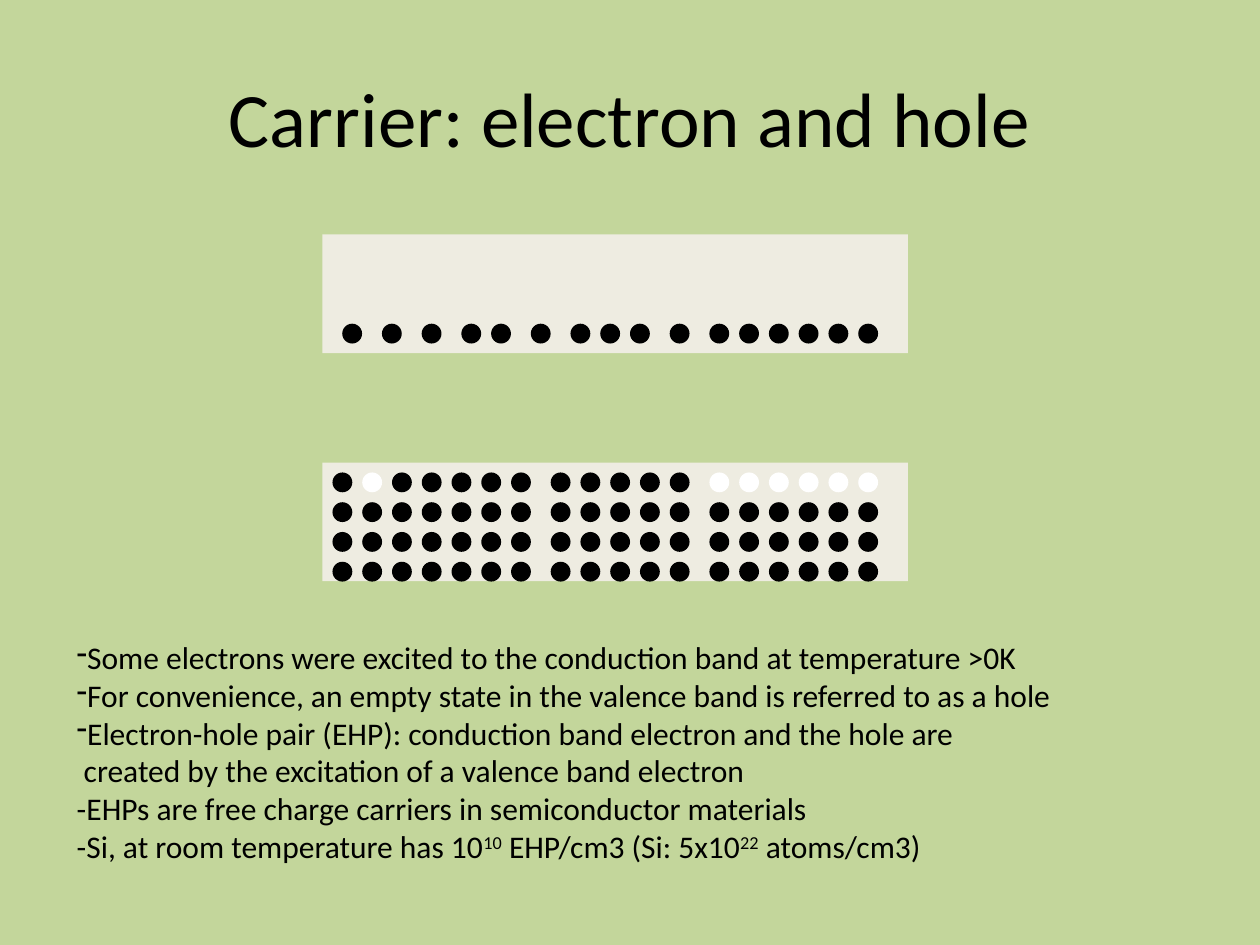
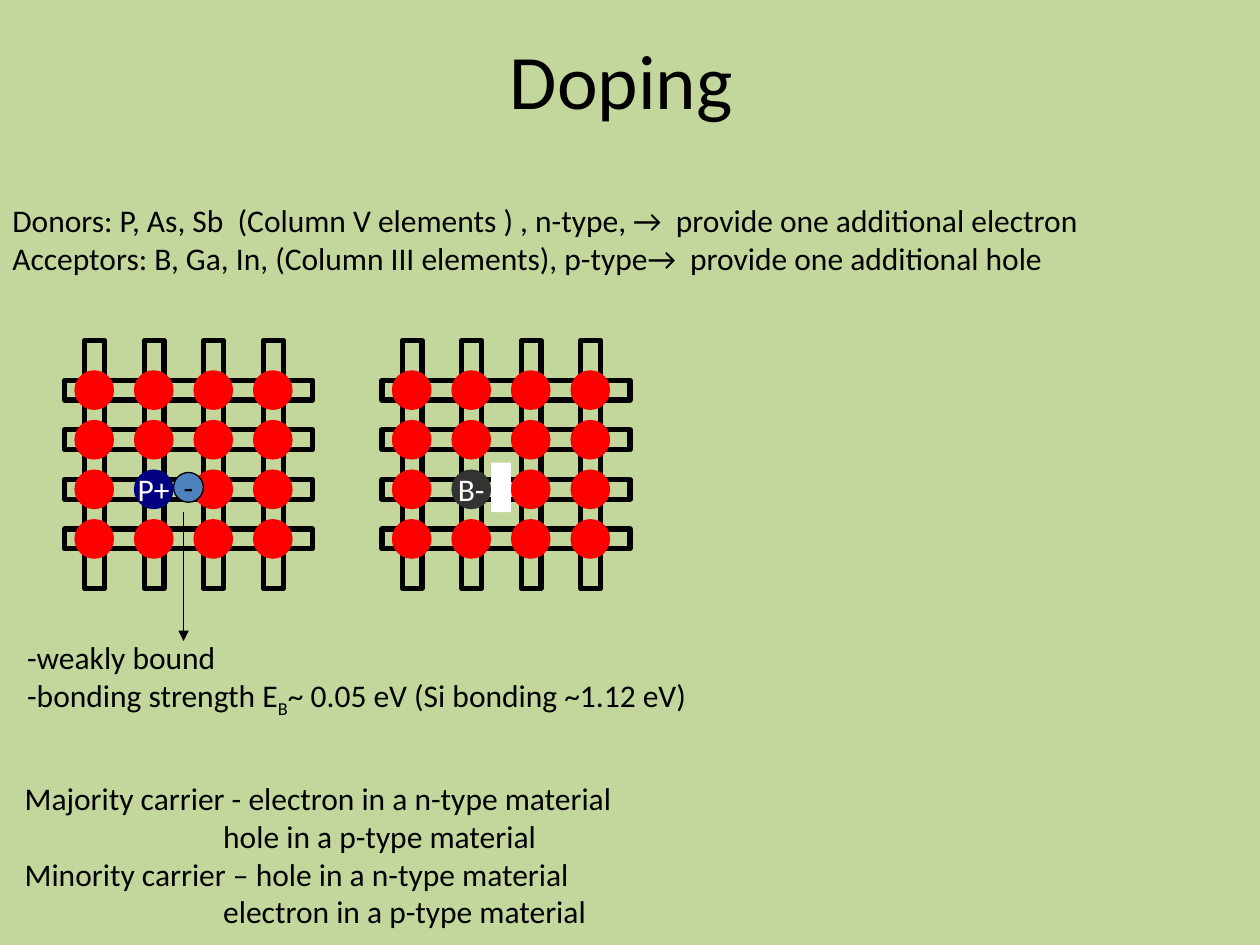
from itertools import accumulate

from lxml import etree
from pptx import Presentation
from pptx.dml.color import RGBColor
from pptx.enum.shapes import MSO_CONNECTOR, MSO_SHAPE
from pptx.enum.text import MSO_ANCHOR, PP_ALIGN
from pptx.oxml.ns import qn
from pptx.util import Pt

BLACK, WHITE, RED = "000000", "FFFFFF", "FF0000"
BACKGROUND, BAND, ELECTRON = "C3D69B", "EEECE1", "4F81BD"
RECT, OVAL = MSO_SHAPE.RECTANGLE, MSO_SHAPE.OVAL
color = RGBColor.from_string


def write(holder, lines, size=18, ink=BLACK, align=PP_ALIGN.LEFT,
          anchor=MSO_ANCHOR.TOP, wrap=True, baseline=0, bullets=0, indents={}):
    frame = holder.text_frame
    frame.word_wrap = wrap
    frame.vertical_anchor = anchor
    for index, line in enumerate(lines):
        paragraph = frame.paragraphs[0] if index == 0 else frame.add_paragraph()
        paragraph.alignment = align
        props = paragraph._p.get_or_add_pPr()
        if index in indents:
            props.set("marL", str(Pt(indents[index])))
        if index < bullets:
            etree.SubElement(props, qn("a:buChar")).set("char", "-")
        for part, words in enumerate(line.split("|")):
            run = paragraph.add_run()
            run.text = words
            run.font.name = "Calibri"
            run.font.size = Pt(size)
            run.font.color.rgb = color(ink)
            if part % 2:
                run._r.get_or_add_rPr().set("baseline", str(baseline * 1000))


def draw(shapes, kind, left, top, width, height, fill=None, line=0):
    shape = shapes.add_shape(kind, Pt(left), Pt(top), Pt(width), Pt(height))
    shape.shadow.inherit = False
    if fill:
        shape.fill.solid()
        shape.fill.fore_color.rgb = color(fill)
    else:
        shape.fill.background()
    if line:
        shape.line.color.rgb = color(BLACK)
        shape.line.width = Pt(line)
    else:
        shape.line.fill.background()
    return shape


deck = Presentation()
deck.slide_width, deck.slide_height = Pt(720), Pt(540)

pages = []
for title, left, top in [("Carrier: electron and hole", 36, 21.6), ("Doping", 31, 0)]:
    slide = deck.slides.add_slide(deck.slide_layouts[6])
    slide.background.fill.solid()
    slide.background.fill.fore_color.rgb = color(BACKGROUND)
    heading = slide.shapes.add_textbox(Pt(left), Pt(top), Pt(648), Pt(90))
    write(heading, [title], size=44, align=PP_ALIGN.CENTER, anchor=MSO_ANCHOR.MIDDLE)
    pages.append(slide.shapes)
carriers, doping = pages

DOT, DOT_STEP = 11.34, 17.01
for band_top in (134, 264.4):
    draw(carriers, RECT, 184.3, band_top, 334.5, 67.8, BAND)

conduction_gaps = [4, 4, 4, 3, 4, 4, 3, 3, 4, 4, 3, 3, 3, 3, 3]
for offset in accumulate(conduction_gaps, initial=0):
    draw(carriers, OVAL, 195.6 + offset * DOT_STEP / 3, 185, DOT, DOT, BLACK)

valence_groups = [(190, 7), (314.7, 5), (405.4, 6)]
valence_columns = [start + i * DOT_STEP for start, count in valence_groups for i in range(count)]
hole_columns = {1, *range(12, 18)}
for row in range(4):
    for column, left in enumerate(valence_columns):
        is_hole = row == 0 and column in hole_columns
        draw(carriers, OVAL, left, 270 + row * DOT_STEP, DOT, DOT, WHITE if is_hole else BLACK)

facts = carriers.add_textbox(Pt(36.8), Pt(361), Pt(626), Pt(137))
write(facts, [
    "Some electrons were excited to the conduction band at temperature >0K",
    "For convenience, an empty state in the valence band is referred to as a hole",
    "Electron-hole pair (EHP): conduction band electron and the hole are",
    "created by the excitation of a valence band electron",
    "-EHPs are free charge carriers in semiconductor materials",
    "-Si, at room temperature has 10|10| EHP/cm3 (Si: 5x10|22| atoms/cm3)",
], bullets=3, indents={3: 4}, baseline=30)

dopants = doping.add_textbox(Pt(0), Pt(111.6), Pt(689), Pt(50))
write(dopants, [
    "Donors: P, As, Sb  (Column V elements ) , n-type, →  provide one additional electron",
    "Acceptors: B, Ga, In, (Column III elements), p-type→  provide one additional hole",
])

ATOM, BOND, BOND_LENGTH = 22.68, 11.34, 141.7
COLUMN_STEP, ROW_STEP = 34.02, 28.35
for lattice_left, dopant, dopant_fill in [(36.85, "P+", "000080"), (218.27, "B-", "333333")]:
    bonds = doping.add_group_shape().shapes
    for row in range(4):
        draw(bonds, RECT, lattice_left, 217.3 + row * ROW_STEP, BOND_LENGTH, BOND, line=3)
    for column in range(4):
        draw(bonds, RECT, lattice_left + 11.6 + column * COLUMN_STEP, 194.6, BOND, BOND_LENGTH, line=3)
    for row in range(4):
        for column in range(4):
            is_dopant = (row, column) == (2, 1)
            atom = draw(doping, OVAL, lattice_left + 5.67 + column * COLUMN_STEP,
                        211.6 + row * ROW_STEP, ATOM, ATOM, dopant_fill if is_dopant else RED)
            if is_dopant:
                write(atom, [dopant], ink=WHITE, align=PP_ALIGN.CENTER,
                      anchor=MSO_ANCHOR.MIDDLE, wrap=False)

extra_electron = draw(doping, OVAL, 99.2, 270, 17, 17, ELECTRON, line=0.75)
write(extra_electron, ["-"], align=PP_ALIGN.CENTER, anchor=MSO_ANCHOR.MIDDLE, wrap=False)
draw(doping, RECT, 280.6, 264.4, 11.34, 28.35, WHITE)

pointer = doping.add_connector(MSO_CONNECTOR.STRAIGHT, Pt(104.9), Pt(292.6), Pt(104.9), Pt(366.3))
pointer.line.color.rgb = color(BLACK)
pointer.line.width = Pt(0.75)
etree.SubElement(pointer.line._get_or_add_ln(), qn("a:tailEnd")).set("type", "triangle")
etree.SubElement(pointer._element.spPr, qn("a:effectLst"))

binding = doping.add_textbox(Pt(8.4), Pt(361), Pt(436), Pt(72))
write(binding, ["-weakly bound", "-bonding strength E|B|~ 0.05 eV (Si bonding ~1.12 eV)"], baseline=-25)

majority_minority = doping.add_textbox(Pt(7), Pt(441.6), Pt(377), Pt(94))
write(majority_minority, [
    "Majority carrier - electron in a n-type material",
    "hole in a p-type material",
    "Minority carrier – hole in a n-type material",
    "electron in a p-type material",
], indents={1: 113.5, 3: 113.5})

deck.save("out.pptx")
